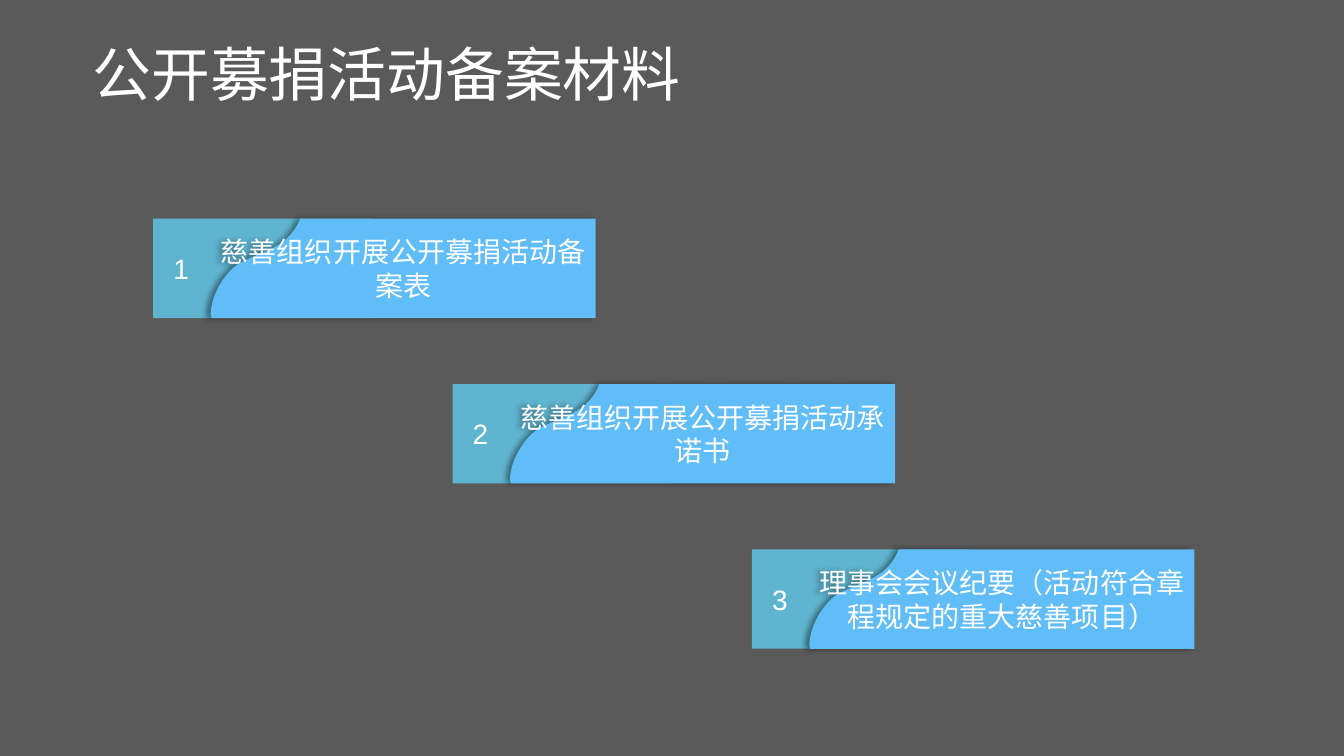
import pptx
import pptx.dml.color
import pptx.enum.shapes
import pptx.enum.text
import pptx.oxml
import pptx.oxml.ns
import pptx.util

Pt = pptx.util.Pt
ALIGN = pptx.enum.text.PP_ALIGN

COLORS = {
    "background": "5A5A5A",
    "tab": "5FB4CF",
    "panel": "60BDF7",
    "text": "FFFFFF",
    "number": "FEFFFF",
    "shadow": "000000",
}
MATERIALS = [
    "慈善组织开展公开募捐活动备案表",
    "慈善组织开展公开募捐活动承诺书",
    "理事会会议纪要（活动符合章程规定的重大慈善项目）",
]

# Banner geometry in points
FIRST_LEFT, FIRST_TOP = 109.44, 156.24
STEP_X, STEP_Y = 213.84, 118.08
TAB_WIDTH, HEIGHT = 155.5, 71
PANEL_OFFSET, PANEL_WIDTH = 41.04, 275.04

# Panel outline relative to its top left corner
PANEL_CORNERS = [(64, 0), (PANEL_WIDTH, 0), (PANEL_WIDTH, HEIGHT), (0.7, HEIGHT), (0, 68.4)]
PANEL_CURVES = [
    [(0, 68.4), (0, 58.3), (5.8, 45.4), (14.4, 36.7)],
    [(14.4, 36.7), (25.9, 24.5), (51.1, 25.2), (61.9, 4.3)],
]


def color(name):
    return pptx.dml.color.RGBColor.from_string(COLORS[name])


def curve_points(controls, steps=16):
    """Points along a cubic curve, without its start."""
    points = []
    for step in range(1, steps + 1):
        t = step / steps
        weights = ((1 - t) ** 3, 3 * t * (1 - t) ** 2, 3 * t**2 * (1 - t), t**3)
        points.append(tuple(
            sum(weight * control[axis] for weight, control in zip(weights, controls))
            for axis in (0, 1)
        ))
    return points


def write_text(shape, text, size=20, fill="text", align=ALIGN.LEFT, left=7.2, spacing=None):
    frame = shape.text_frame
    frame.word_wrap = True
    frame.vertical_anchor = pptx.enum.text.MSO_ANCHOR.MIDDLE
    frame.margin_left, frame.margin_right = Pt(left), Pt(7.2)
    frame.margin_top = frame.margin_bottom = Pt(3.6)
    paragraph = frame.paragraphs[0]
    paragraph.alignment = align
    if spacing:
        paragraph.line_spacing = spacing
    run = paragraph.add_run()
    run.text = text
    run.font.name = "Arial"
    run.font.size = Pt(size)
    run.font.color.rgb = color(fill)


class SlideBuilder:
    def __init__(self, slide):
        self.slide = slide
        slide.background.fill.solid()
        slide.background.fill.fore_color.rgb = color("background")

    def title(self, text, left, top, width, height):
        box = self.slide.shapes.add_textbox(Pt(left), Pt(top), Pt(width), Pt(height))
        write_text(box, text, size=42, spacing=0.9)

    def paint(self, shape, fill):
        shape.fill.solid()
        shape.fill.fore_color.rgb = color(fill)
        shape.line.fill.background()
        shape.shadow.inherit = False

    def tab(self, group, number, left, top):
        shape = group.shapes.add_shape(
            pptx.enum.shapes.MSO_SHAPE.RECTANGLE, Pt(left), Pt(top), Pt(TAB_WIDTH), Pt(HEIGHT))
        self.paint(shape, "tab")
        write_text(shape, number, fill="number", left=14.4)

    def panel(self, group, text, left, top):
        outline = PANEL_CORNERS + [point for curve in PANEL_CURVES for point in curve_points(curve)]
        points = [(Pt(left + x), Pt(top + y)) for x, y in outline]
        builder = group.shapes.build_freeform(*points[0])
        builder.add_line_segments(points[1:], close=True)
        shape = builder.convert_to_shape()
        self.paint(shape, "panel")
        self.left_shadow(shape)
        write_text(shape, text, align=ALIGN.CENTER)

    def left_shadow(self, shape):
        effects = shape._element.spPr.find(pptx.oxml.ns.qn("a:effectLst"))
        effects.append(pptx.oxml.parse_xml(
            f'<a:outerShdw {pptx.oxml.ns.nsdecls("a")} blurRad="{Pt(4)}" dist="{Pt(3)}"'
            ' dir="10800000" algn="r" rotWithShape="0">'
            f'<a:srgbClr val="{COLORS["shadow"]}"><a:alpha val="40000"/></a:srgbClr>'
            '</a:outerShdw>'))

    def banner(self, index, text):
        left = FIRST_LEFT + index * STEP_X
        top = FIRST_TOP + index * STEP_Y
        group = self.slide.shapes.add_group_shape()
        self.tab(group, str(index + 1), left, top)
        self.panel(group, text, left + PANEL_OFFSET, top)


def main():
    presentation = pptx.Presentation()
    presentation.slide_width, presentation.slide_height = Pt(960), Pt(540)
    builder = SlideBuilder(presentation.slides.add_slide(presentation.slide_layouts[6]))

    # Title
    builder.title("公开募捐活动备案材料", 59, 28.5, 592.5, 54)

    # Staircase of numbered materials
    for index, text in enumerate(MATERIALS):
        builder.banner(index, text)

    presentation.save("out.pptx")


if __name__ == "__main__":
    main()
